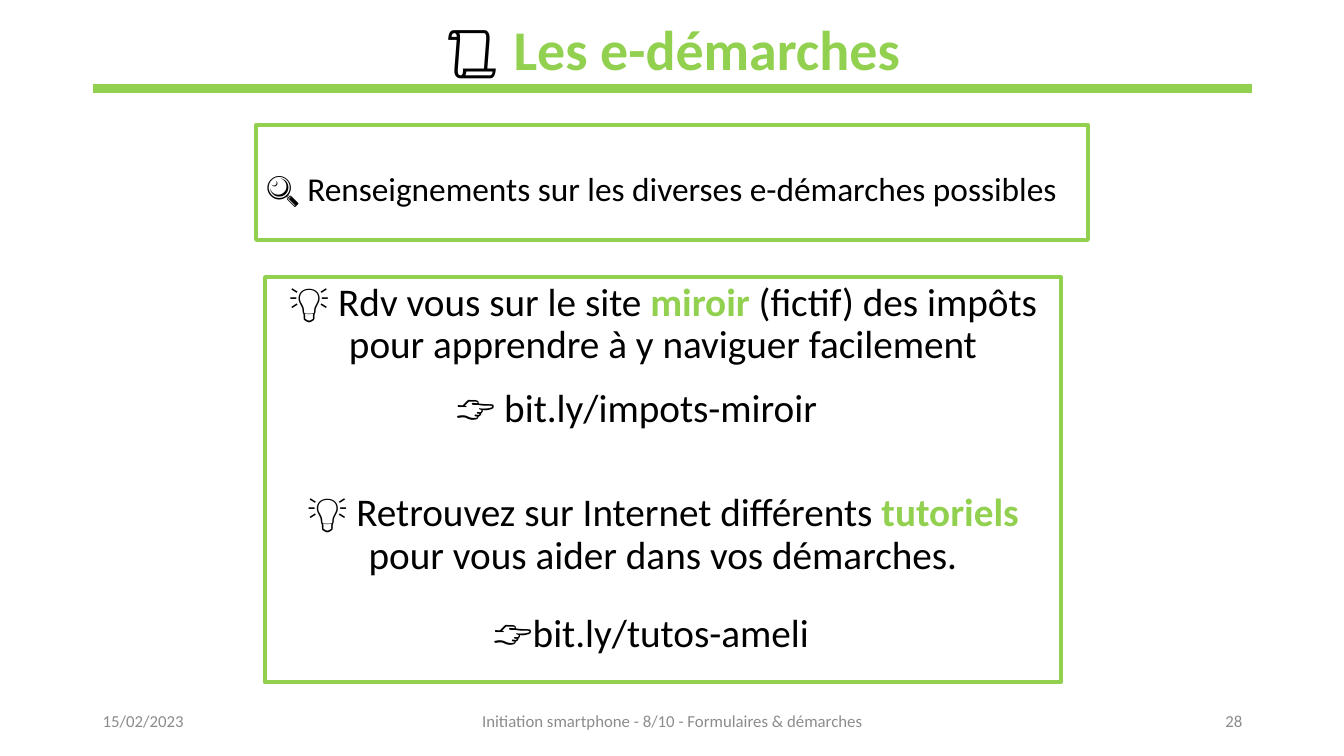
from dataclasses import dataclass
from typing import NamedTuple

from lxml import etree
from pptx import Presentation
from pptx import util as u
from pptx.dml.color import RGBColor
from pptx.enum import shapes, text
from pptx.oxml.ns import qn

PX = 9144  # EMU per px, 100 px to the inch


@dataclass(frozen=True)
class Theme:
    font: str = "Calibri"
    green: RGBColor = RGBColor(0x92, 0xD0, 0x50)
    black: RGBColor = RGBColor(0, 0, 0)
    grey: RGBColor = RGBColor(0x8C, 0x8C, 0x8C)
    title_size: float = 40
    intro_size: float = 23.8
    body_size: float = 28
    footer_size: float = 12
    rule_width: float = 6
    frame_width: float = 3


THEME = Theme()
LEFT, CENTER, RIGHT = text.PP_ALIGN.LEFT, text.PP_ALIGN.CENTER, text.PP_ALIGN.RIGHT


class Area(NamedTuple):
    left: int
    top: int
    width: int
    height: int


class Span(NamedTuple):
    words: str
    highlighted: bool = False


@dataclass(frozen=True)
class Para:
    spans: tuple[Span, ...]
    size: float
    align: text.PP_ALIGN = LEFT
    line_spacing: float = 1.0
    space_before: float = 0
    color: RGBColor = THEME.black


@dataclass(frozen=True)
class Frame:
    area: Area
    paras: tuple[Para, ...]
    top_inset: int = 5


@dataclass(frozen=True)
class Label:
    area: Area
    para: Para
    anchor: text.MSO_ANCHOR = text.MSO_ANCHOR.TOP


TITLE = Para((Span("📜 "), Span("Les e-démarches", True)), THEME.title_size, CENTER, 0.9)

FRAMES = (
    Frame(Area(254, 124, 825, 114), (
        Para((Span("🔍 Renseignements sur les diverses e-démarches possibles"),),
             THEME.intro_size, line_spacing=0.8),
    ), top_inset=51),
    Frame(Area(263, 275, 789, 402), (
        Para((Span("💡 Rdv vous sur le site "), Span("miroir", True),
              Span(" (fictif) des impôts pour apprendre à y naviguer facilement")),
             THEME.body_size, CENTER, 0.9),
        Para((Span("💡 Retrouvez sur Internet différents "), Span("tutoriels ", True),
              Span("pour vous aider dans vos démarches.")),
             THEME.body_size, CENTER, 0.9, space_before=90),
    )),
)


def footer(left: int, width: int, words: str, align: text.PP_ALIGN) -> Label:
    para = Para((Span(words),), THEME.footer_size, align, color=THEME.grey)
    return Label(Area(left, 695, width, 40), para, text.MSO_ANCHOR.MIDDLE)


LABELS = (
    Label(Area(442, 375, 430, 57), Para((Span("👉 bit.ly/impots-miroir"),), THEME.body_size)),
    Label(Area(479, 599, 358, 57), Para((Span("👉bit.ly/tutos-ameli"),), THEME.body_size)),
    footer(92, 300, "15/02/2023", LEFT),
    footer(442, 450, "Initiation smartphone - 8/10 - Formulaires & démarches", CENTER),
    footer(942, 300, "28", RIGHT),
)


def place(shape, area: Area) -> None:
    shape.left, shape.top, shape.width, shape.height = (side * PX for side in area)


def write(box, paras: tuple[Para, ...], anchor: text.MSO_ANCHOR, top_inset: int = 5) -> None:
    frame = box.text_frame
    frame.word_wrap = True
    frame.auto_size = text.MSO_AUTO_SIZE.NONE
    frame.vertical_anchor = anchor
    frame.margin_left = frame.margin_right = 10 * PX
    frame.margin_top, frame.margin_bottom = top_inset * PX, 5 * PX
    for index, para in enumerate(paras):
        paragraph = frame.add_paragraph() if index else frame.paragraphs[0]
        remove_bullet(paragraph)
        paragraph.alignment = para.align
        paragraph.line_spacing = para.line_spacing
        paragraph.space_before = u.Pt(para.space_before)
        paragraph.font.name = THEME.font
        paragraph.font.size = u.Pt(para.size)
        for span in para.spans:
            run = paragraph.add_run()
            run.text = span.words
            run.font.color.rgb = THEME.green if span.highlighted else para.color
            if span.highlighted:
                run.font.bold = True


def remove_bullet(paragraph) -> None:
    properties = paragraph._p.get_or_add_pPr()
    properties.set("marL", "0")
    properties.set("indent", "0")
    etree.SubElement(properties, qn("a:buNone"))


def draw_rule(slide, left: int, right: int, y: int) -> None:
    rule = slide.shapes.add_connector(
        shapes.MSO_CONNECTOR.STRAIGHT, left * PX, y * PX, right * PX, y * PX)
    rule.line.color.rgb = THEME.green
    rule.line.width = u.Pt(THEME.rule_width)
    etree.SubElement(rule._element.spPr, qn("a:effectLst"))


def fill_frame(box, frame: Frame) -> None:
    place(box, frame.area)
    box.line.color.rgb = THEME.green
    box.line.width = u.Pt(THEME.frame_width)
    write(box, frame.paras, text.MSO_ANCHOR.TOP, frame.top_inset)


def add_label(slide, label: Label) -> None:
    box = slide.shapes.add_textbox(*(side * PX for side in label.area))
    write(box, (label.para,), label.anchor)


def main() -> None:
    deck = Presentation()
    deck.slide_width, deck.slide_height = 1333 * PX, 750 * PX
    page = deck.slides.add_slide(deck.slide_layouts.get_by_name("Two Content"))
    title, *bodies = page.placeholders
    place(title, Area(92, -21, 1150, 145))
    write(title, (TITLE,), text.MSO_ANCHOR.MIDDLE)
    title.text_frame.paragraphs[0].font.bold = True
    draw_rule(page, 92, 1242, 88)
    for body, frame in zip(bodies, FRAMES):
        fill_frame(body, frame)
    for label in LABELS:
        add_label(page, label)
    deck.save("out.pptx")


if __name__ == "__main__":
    main()
